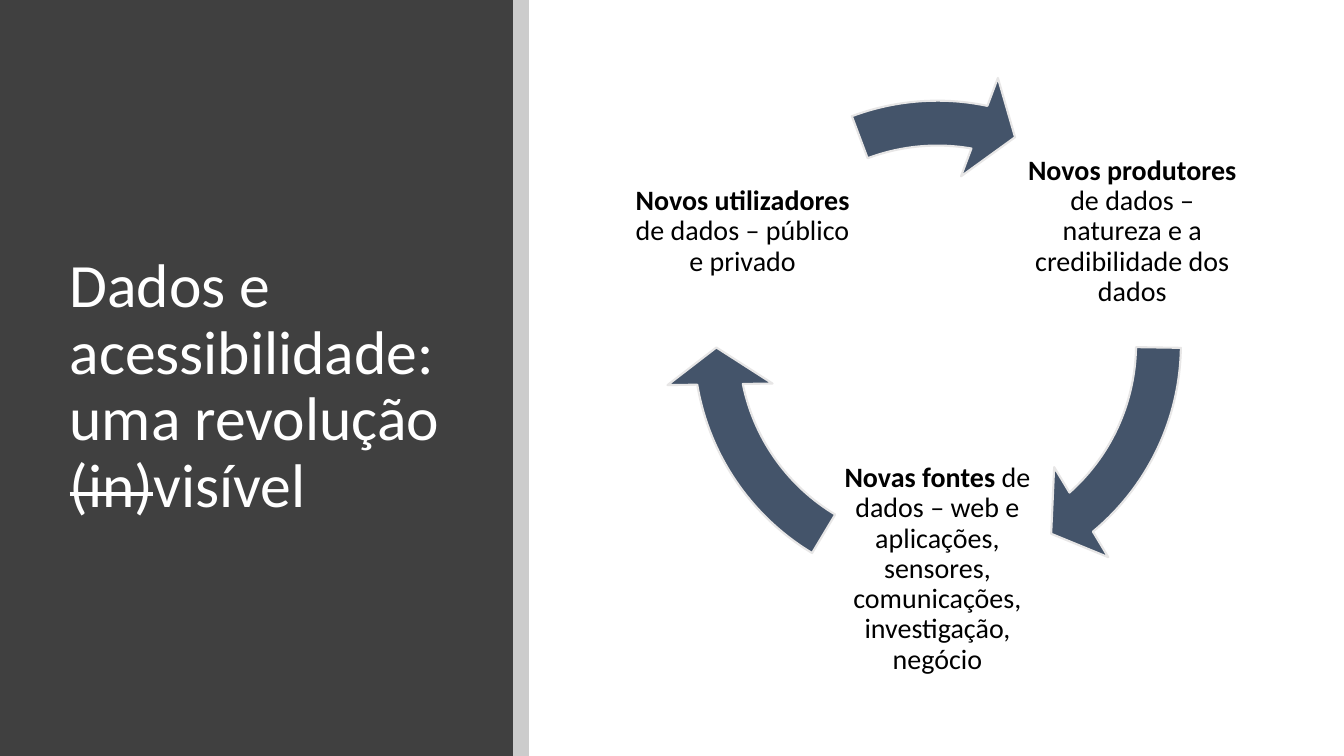
from collections import namedtuple
from math import cos, radians, sin

from lxml.etree import SubElement
from pptx import Presentation
from pptx.dml.color import RGBColor
from pptx.enum.shapes import MSO_SHAPE
from pptx.enum.text import MSO_ANCHOR, MSO_AUTO_SIZE, PP_ALIGN
from pptx.oxml.ns import qn
from pptx.util import Cm, Pt

COLORS = {
    "panel": "404040",
    "bar": "000000",
    "title": "FFFFFF",
    "label": "000000",
    "arrow": "44546A",
    "arrow_edge": "E7E6E6",
}
FONT = "Calibri"
SLIDE_WIDTH, SLIDE_HEIGHT = 33.87, 19.05

Box = namedtuple("Box", "left top width height")
Stage = namedtuple("Stage", "angle heading detail arrow_start arrow_end")

TITLE_RUNS = [
    ("Dados e acessibilidade: uma revolução ", False),
    ("(in)", True),
    ("visível", False),
]
STAGES = [
    Stage(-30, "Novos produtores",
          " de dados – natureza e a credibilidade dos dados", 0.85, 49.42),
    Stage(90, "Novas fontes ",
          "de dados – web e aplicações, sensores, comunicações, investigação, negócio",
          120.98, 169.55),
    Stage(210, "Novos utilizadores ",
          "de dados – público e privado", 249.44, 280.96),
]


def to_cm(box):
    return [Cm(length) for length in box]


def add_run(paragraph, text, size, color, bold=False):
    run = paragraph.add_run()
    run.text = text
    run.font.name = FONT
    run.font.size = Pt(size)
    run.font.bold = bold
    run.font.color.rgb = RGBColor.from_string(COLORS[color])
    return run


def add_filled(shapes, preset, box, color):
    shape = shapes.add_shape(preset, *to_cm(box))
    shape.shadow.inherit = False
    shape.fill.solid()
    shape.fill.fore_color.rgb = RGBColor.from_string(COLORS[color])
    shape.line.fill.background()
    return shape


def add_title_panel(slide, box):
    bar_width = 0.4
    panel_width = box.width - bar_width
    add_filled(slide.shapes, MSO_SHAPE.RECTANGLE,
               box._replace(width=panel_width), "panel")
    bar = add_filled(slide.shapes, MSO_SHAPE.RECTANGLE,
                     box._replace(left=box.left + panel_width, width=bar_width), "bar")
    bar_color = bar.element.spPr.find(qn("a:solidFill"))[0]
    SubElement(bar_color, qn("a:alpha")).set("val", "20000")

    title = slide.shapes.title
    title.element.getparent().append(title.element)
    title.left, title.top, title.width, title.height = to_cm(
        Box(box.left + 1.5, box.top + 2.26, 10.11, 15.01))
    frame = title.text_frame
    frame.word_wrap = True
    frame.auto_size = MSO_AUTO_SIZE.NONE
    frame.vertical_anchor = MSO_ANCHOR.MIDDLE
    heading = frame.paragraphs[0]
    heading.alignment = PP_ALIGN.LEFT
    heading.line_spacing = 0.9
    for text, struck in TITLE_RUNS:
        run = add_run(heading, text, 44, "title")
        if struck:
            run.font._element.set("strike", "sngStrike")


def add_label(shapes, stage, box):
    label = shapes.add_textbox(*to_cm(box))
    frame = label.text_frame
    frame.word_wrap = True
    frame.vertical_anchor = MSO_ANCHOR.MIDDLE
    frame.margin_left = frame.margin_right = Cm(0.07)
    frame.margin_top = frame.margin_bottom = Cm(0.07)
    paragraph = frame.paragraphs[0]
    paragraph.alignment = PP_ALIGN.CENTER
    paragraph.line_spacing = 0.9
    paragraph.space_after = Pt(7)
    add_run(paragraph, stage.heading, 20, "label", bold=True)
    add_run(paragraph, stage.detail, 20, "label")


def add_arrow(shapes, stage, box):
    arrow = add_filled(shapes, MSO_SHAPE.CIRCULAR_ARROW, box, "arrow")
    arrow.line.color.rgb = RGBColor.from_string(COLORS["arrow_edge"])
    arrow.line.width = Pt(1.5)
    head_angle = 9.6
    settings = [8.2 / 100, head_angle * 0.6, stage.arrow_end * 0.6,
                stage.arrow_start * 0.6, 9.6 / 100]
    for index, setting in enumerate(settings):
        arrow.adjustments[index] = setting


def add_cycle(slide, box):
    label_size, radius = 5.84, 5.67
    center_x = box.left + box.width / 2
    center_y = box.top + box.height / 2
    cycle = slide.shapes.add_group_shape().shapes
    for stage in STAGES:
        angle = radians(stage.angle)
        add_label(cycle, stage, Box(
            center_x + radius * cos(angle) - label_size / 2,
            center_y + radius * sin(angle) - label_size / 2,
            label_size, label_size))
        add_arrow(cycle, stage, box)


def main():
    presentation = Presentation()
    presentation.slide_width = Cm(SLIDE_WIDTH)
    presentation.slide_height = Cm(SLIDE_HEIGHT)
    slide = presentation.slides.add_slide(presentation.slide_layouts[5])
    add_title_panel(slide, Box(0, 0, 13.33, SLIDE_HEIGHT))
    add_cycle(slide, Box(16.73, 1.78, 13.79, 13.79))
    presentation.save("out.pptx")


if __name__ == "__main__":
    main()
